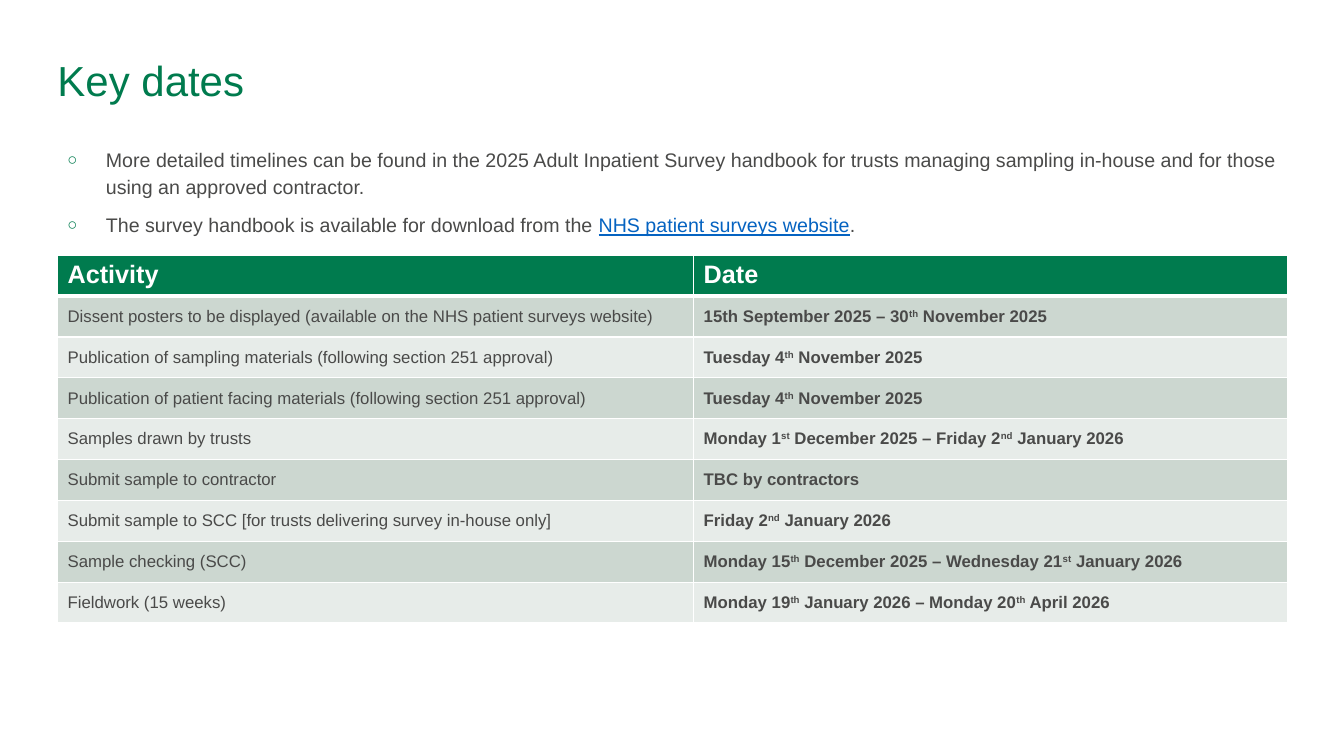
import dataclasses

import lxml.etree
import pptx
import pptx.dml.color
import pptx.enum.text
import pptx.oxml
import pptx.oxml.ns
import pptx.util

Cm, Pt = pptx.util.Cm, pptx.util.Pt
RGBColor = pptx.dml.color.RGBColor

GREEN = RGBColor(0x00, 0x7B, 0x4E)
GREY = RGBColor(0x4A, 0x4A, 0x49)
LINK_BLUE = RGBColor(0x05, 0x63, 0xC1)
WHITE = RGBColor(0xFF, 0xFF, 0xFF)
BANDS = (RGBColor(0xCC, 0xD7, 0xD0), RGBColor(0xE7, 0xEC, 0xE9))

LEFT, WIDTH = Cm(1.45), Cm(30.99)
COLUMN_WIDTHS = (Cm(16.03), Cm(14.96))
ROW_HEIGHT = Cm(1.03)
THIN, THICK = 1, 3


@dataclasses.dataclass(frozen=True)
class KeyDate:
    """One table row; parts of the date between carets are superscript."""
    activity: str
    date: str


@dataclasses.dataclass(frozen=True)
class Bullet:
    """A bullet whose link part is coloured and underlined."""
    text: str
    link: str = ""
    ending: str = ""


BULLETS = (
    Bullet("More detailed timelines can be found in the 2025 Adult Inpatient Survey handbook "
           "for trusts managing sampling in-house and for those using an approved contractor."),
    Bullet("The survey handbook is available for download from the ",
           "NHS patient surveys website", "."),
)

KEY_DATES = (
    KeyDate("Dissent posters to be displayed (available on the NHS patient surveys website)",
            "15th September 2025 – 30^th^ November 2025"),
    KeyDate("Publication of sampling materials (following section 251 approval)",
            "Tuesday 4^th^ November 2025"),
    KeyDate("Publication of patient facing materials (following section 251 approval)",
            "Tuesday 4^th^ November 2025"),
    KeyDate("Samples drawn by trusts",
            "Monday 1^st^ December 2025 – Friday 2^nd^ January 2026"),
    KeyDate("Submit sample to contractor", "TBC by contractors"),
    KeyDate("Submit sample to SCC [for trusts delivering survey in-house only]",
            "Friday 2^nd^ January 2026"),
    KeyDate("Sample checking (SCC)",
            "Monday 15^th^ December 2025 – Wednesday 21^st^ January 2026"),
    KeyDate("Fieldwork (15 weeks)",
            "Monday 19^th^ January 2026 – Monday 20^th^ April 2026"),
)


def set_font(para, size: int, color: RGBColor, bold: bool = False) -> None:
    para.font.name = "Arial"
    para.font.size = Pt(size)
    para.font.bold = bold
    para.font.color.rgb = color


def add_element(parent, tag: str, **attributes: str):
    return lxml.etree.SubElement(parent, pptx.oxml.ns.qn(tag), attributes)


def add_title(page) -> None:
    box = page.shapes.add_textbox(LEFT, Cm(1.37), Cm(31.01), Cm(1.27))
    frame = box.text_frame
    frame.word_wrap = True
    frame.margin_left = frame.margin_top = frame.margin_right = frame.margin_bottom = 0
    frame.vertical_anchor = pptx.enum.text.MSO_ANCHOR.BOTTOM
    frame.text = "Key dates"
    set_font(frame.paragraphs[0], 30, GREEN)


def add_bullet_mark(para) -> None:
    properties = para._p.get_or_add_pPr()
    properties.set("marL", str(Cm(0.97)))
    properties.set("indent", str(-Cm(0.97)))
    add_element(add_element(properties, "a:buClr"), "a:srgbClr", val=str(GREEN))
    add_element(properties, "a:buSzPct", val="85000")
    add_element(properties, "a:buFont", typeface="Arial")
    add_element(properties, "a:buChar", char="○")


def add_bullets(page) -> None:
    frame = page.shapes.add_textbox(LEFT, Cm(3.53), WIDTH, Cm(3.25)).text_frame
    frame.word_wrap = True
    for index, bullet in enumerate(BULLETS):
        para = frame.add_paragraph() if index else frame.paragraphs[0]
        add_bullet_mark(para)
        set_font(para, 14, GREY)
        para.line_spacing = 1.14
        if index:
            para.space_before = Pt(8)
        para.add_run().text = bullet.text
        if bullet.link:
            span = para.add_run()
            span.text = bullet.link
            span.font.color.rgb = LINK_BLUE
            span.font.underline = True
            para.add_run().text = bullet.ending


def set_borders(cell, top: int, bottom: int) -> None:
    properties = cell._tc.get_or_add_tcPr()
    for side, points in (("L", THIN), ("R", THIN), ("T", top), ("B", bottom)):
        line = add_element(properties, f"a:ln{side}", w=str(Pt(points)))
        add_element(add_element(line, "a:solidFill"), "a:srgbClr", val=str(WHITE))


def fill_cell(cell, text: str, color: RGBColor) -> None:
    cell.fill.solid()
    cell.fill.fore_color.rgb = color
    for index, part in enumerate(text.split("^")):
        span = cell.text_frame.paragraphs[0].add_run()
        span.text = part
        if index % 2:
            span._r.get_or_add_rPr().set("baseline", "30000")


def add_dates_table(page) -> None:
    rows = (KeyDate("Activity", "Date"),) + KEY_DATES
    table = page.shapes.add_table(len(rows), len(COLUMN_WIDTHS), LEFT, Cm(6.43),
                                  WIDTH, ROW_HEIGHT * len(rows)).table
    for column, width in zip(table.columns, COLUMN_WIDTHS):
        column.width = width
    for row, key_date in enumerate(rows):
        for column, text in enumerate((key_date.activity, key_date.date)):
            cell = table.cell(row, column)
            set_borders(cell, THICK if row == 1 else THIN, THICK if row == 0 else THIN)
            fill_cell(cell, text, BANDS[(row - 1) % 2] if row else GREEN)
            para = cell.text_frame.paragraphs[0]
            if row:
                cell.vertical_anchor = pptx.enum.text.MSO_ANCHOR.MIDDLE
                set_font(para, 12, GREY, bold=column == 1)
            else:
                set_font(para, 18, WHITE, bold=True)


def main() -> None:
    deck = pptx.Presentation()
    deck.slide_width, deck.slide_height = Cm(33.87), Cm(19.05)
    page = deck.slides.add_slide(deck.slide_layouts[6])
    add_title(page)
    add_bullets(page)
    add_dates_table(page)
    deck.save("out.pptx")


if __name__ == "__main__":
    main()
